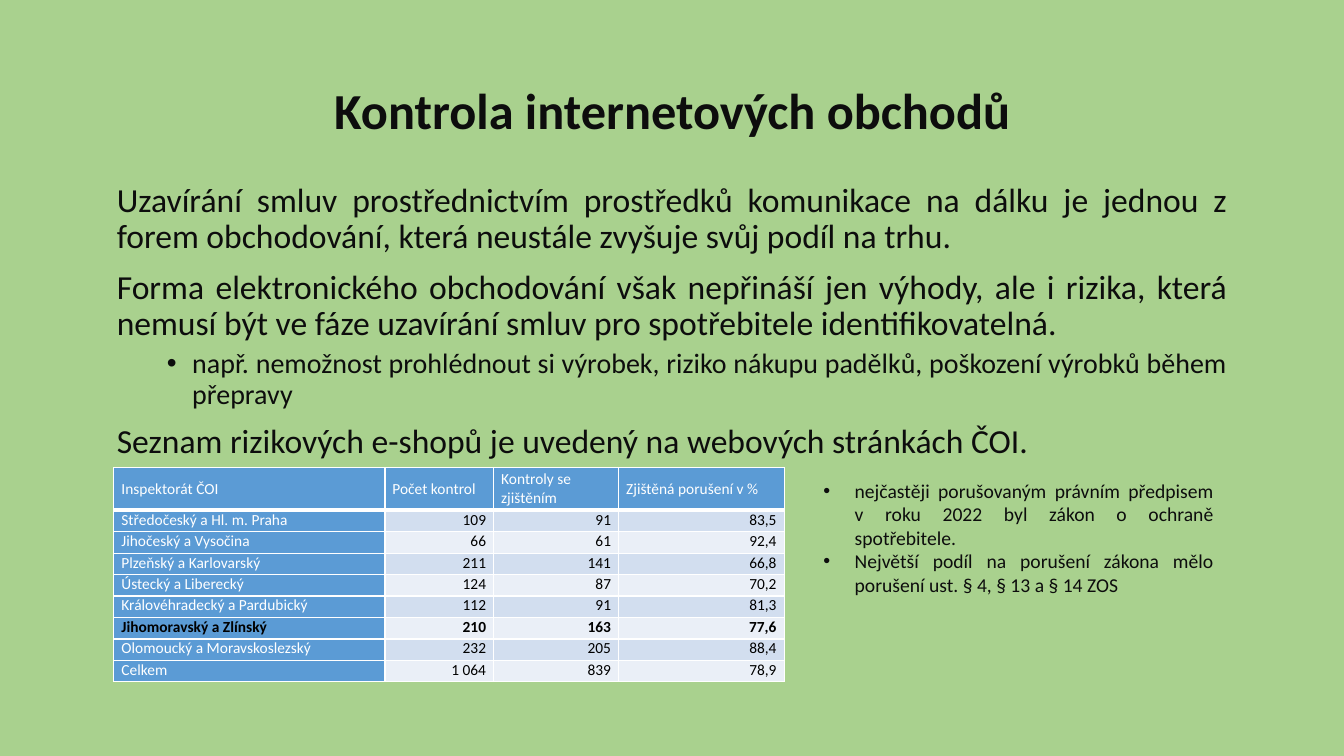
from dataclasses import dataclass

from lxml.etree import SubElement
from pptx import Presentation
from pptx.dml.color import RGBColor
from pptx.enum.text import MSO_ANCHOR, MSO_AUTO_SIZE, PP_ALIGN
from pptx.oxml import parse_xml
from pptx.oxml.ns import nsdecls, qn
from pptx.util import Cm, Pt

# Content
TITLE = "Kontrola internetových obchodů"
BODY = [  # (level, text)
    (0, "Uzavírání smluv prostřednictvím prostředků komunikace na dálku je jednou "
        "z forem obchodování, která neustále zvyšuje svůj podíl na trhu."),
    (0, "Forma elektronického obchodování však nepřináší jen výhody, ale i rizika, která "
        "nemusí být ve fáze uzavírání smluv pro spotřebitele identifikovatelná."),
    (1, "např. nemožnost prohlédnout si výrobek, riziko nákupu padělků, "
        "poškození výrobků během přepravy"),
    (0, "Seznam rizikových e-shopů je uvedený na webových stránkách ČOI."),
]
FINDINGS = [
    "nejčastěji porušovaným právním předpisem v roku 2022 byl zákon o ochraně spotřebitele.",
    "Největší podíl na porušení zákona mělo porušení ust. § 4, § 13 a § 14 ZOS",
]
INSPECTIONS = [
    ("Inspektorát ČOI", "Počet kontrol", "Kontroly se zjištěním", "Zjištěná porušení v %"),
    ("Středočeský a Hl. m. Praha", "109", "91", "83,5"),
    ("Jihočeský a Vysočina", "66", "61", "92,4"),
    ("Plzeňský a Karlovarský", "211", "141", "66,8"),
    ("Ústecký a Liberecký", "124", "87", "70,2"),
    ("Královéhradecký a Pardubický", "112", "91", "81,3"),
    ("Jihomoravský a Zlínský", "210", "163", "77,6"),
    ("Olomoucký a Moravskoslezský", "232", "205", "88,4"),
    ("Celkem", "1 064", "839", "78,9"),
]
HIGHLIGHT = "Jihomoravský a Zlínský"

# Geometry in centimetres
TITLE_AREA = (2.34, 1.02, 29.21, 3.68)
BODY_AREA = (2.69, 4.5, 28.5, 12.65)
FINDINGS_AREA = (20.5, 11.94, 10.34, 3.25)
TABLE_CORNER = (2.87, 11.79)
COLUMN_WIDTHS = (6.83, 2.74, 3.15, 4.17)
HEADER_HEIGHT, ROW_HEIGHT = 1.07, 0.54


@dataclass(frozen=True)
class Theme:
    font: str = "Calibri"
    background: str = "A9D18E"
    ink: str = "0D0D0D"
    black: str = "000000"
    white: str = "FFFFFF"
    accent: str = "5B9BD5"
    bands: tuple = ("D2DEEF", "EAEFF7")
    title: int = 36
    levels: tuple = (24, 20)
    findings: int = 14
    table: int = 11


THEME = Theme()


def style(para, size, color, align, bold=False, before=0.0, line=None):
    para.alignment = align
    para.space_before = Pt(before)
    para.line_spacing = line
    font = para.font
    font.name, font.size, font.bold = THEME.font, Pt(size), bold
    font.color.rgb = RGBColor.from_string(color)


def set_bullet(para, indent, hanging, bullet=True):
    properties = para._p.get_or_add_pPr()
    properties.set("marL", str(Cm(indent)))
    properties.set("indent", str(-Cm(hanging)))
    if bullet:
        SubElement(properties, qn("a:buFont")).set("typeface", "Arial")
        SubElement(properties, qn("a:buChar")).set("char", "•")
    else:
        SubElement(properties, qn("a:buNone"))


def place(box, area):
    box.left, box.top, box.width, box.height = map(Cm, area)
    frame = box.text_frame
    frame.word_wrap = True
    frame.auto_size = MSO_AUTO_SIZE.NONE
    return frame


def paragraphs(frame, texts):
    for index, text in enumerate(texts):
        para = frame.add_paragraph() if index else frame.paragraphs[0]
        para.text = text
        yield para


def set_borders(cell, bottom):
    properties = cell._tc.get_or_add_tcPr()
    for index, (side, width) in enumerate((("L", 1), ("R", 1), ("T", 1), ("B", bottom))):
        properties.insert(index, parse_xml(
            f'<a:ln{side} {nsdecls("a")} w="{Pt(width)}"><a:solidFill>'
            f'<a:srgbClr val="{THEME.white}"/></a:solidFill></a:ln{side}>'))


def fill_cell(cell, text, row, column):
    header, label = row == 0, column == 0
    bold = INSPECTIONS[row][0] == HIGHLIGHT
    fill = THEME.accent if header or label else THEME.bands[(row - 1) % 2]
    color = THEME.white if header or (label and not bold) else THEME.black
    cell.fill.solid()
    cell.fill.fore_color.rgb = RGBColor.from_string(fill)
    cell.margin_left = cell.margin_right = Cm(0.19)
    cell.margin_top = cell.margin_bottom = 0
    cell.vertical_anchor = MSO_ANCHOR.MIDDLE if header else MSO_ANCHOR.TOP
    cell.text = text
    align = PP_ALIGN.LEFT if header or label else PP_ALIGN.RIGHT
    style(cell.text_frame.paragraphs[0], THEME.table, color, align, bold, before=3)
    set_borders(cell, bottom=3 if header else 1)


def main():
    deck = Presentation()
    deck.slide_width, deck.slide_height = Cm(33.87), Cm(19.05)
    page = deck.slides.add_slide(deck.slide_layouts[1])
    page.background.fill.solid()
    page.background.fill.fore_color.rgb = RGBColor.from_string(THEME.background)

    # Title
    frame = place(page.shapes.title, TITLE_AREA)
    frame.vertical_anchor = MSO_ANCHOR.MIDDLE
    frame.text = TITLE
    style(frame.paragraphs[0], THEME.title, THEME.ink, PP_ALIGN.CENTER, True, line=0.9)

    # Body text
    frame = place(page.placeholders[1], BODY_AREA)
    for para, (level, _) in zip(paragraphs(frame, [text for _, text in BODY]), BODY):
        para.level = level
        style(para, THEME.levels[level], THEME.ink, PP_ALIGN.JUSTIFY,
              before=5 if level else 10, line=0.9)
        set_bullet(para, 1.9 * level, 0.64 * level, bullet=level > 0)

    # Findings beside the table
    frame = place(page.shapes.add_textbox(0, 0, 0, 0), FINDINGS_AREA)
    for para in paragraphs(frame, FINDINGS):
        style(para, THEME.findings, THEME.ink, PP_ALIGN.JUSTIFY)
        set_bullet(para, 0.79, 0.79)

    # Inspection table
    heights = [HEADER_HEIGHT] + [ROW_HEIGHT] * (len(INSPECTIONS) - 1)
    table = page.shapes.add_table(
        len(INSPECTIONS), len(COLUMN_WIDTHS), *map(Cm, TABLE_CORNER),
        Cm(sum(COLUMN_WIDTHS)), Cm(sum(heights))).table
    for column, width in zip(table.columns, COLUMN_WIDTHS):
        column.width = Cm(width)
    for row, (values, height) in enumerate(zip(INSPECTIONS, heights)):
        table.rows[row].height = Cm(height)
        for column, text in enumerate(values):
            fill_cell(table.cell(row, column), text, row, column)

    deck.save("out.pptx")


if __name__ == "__main__":
    main()
